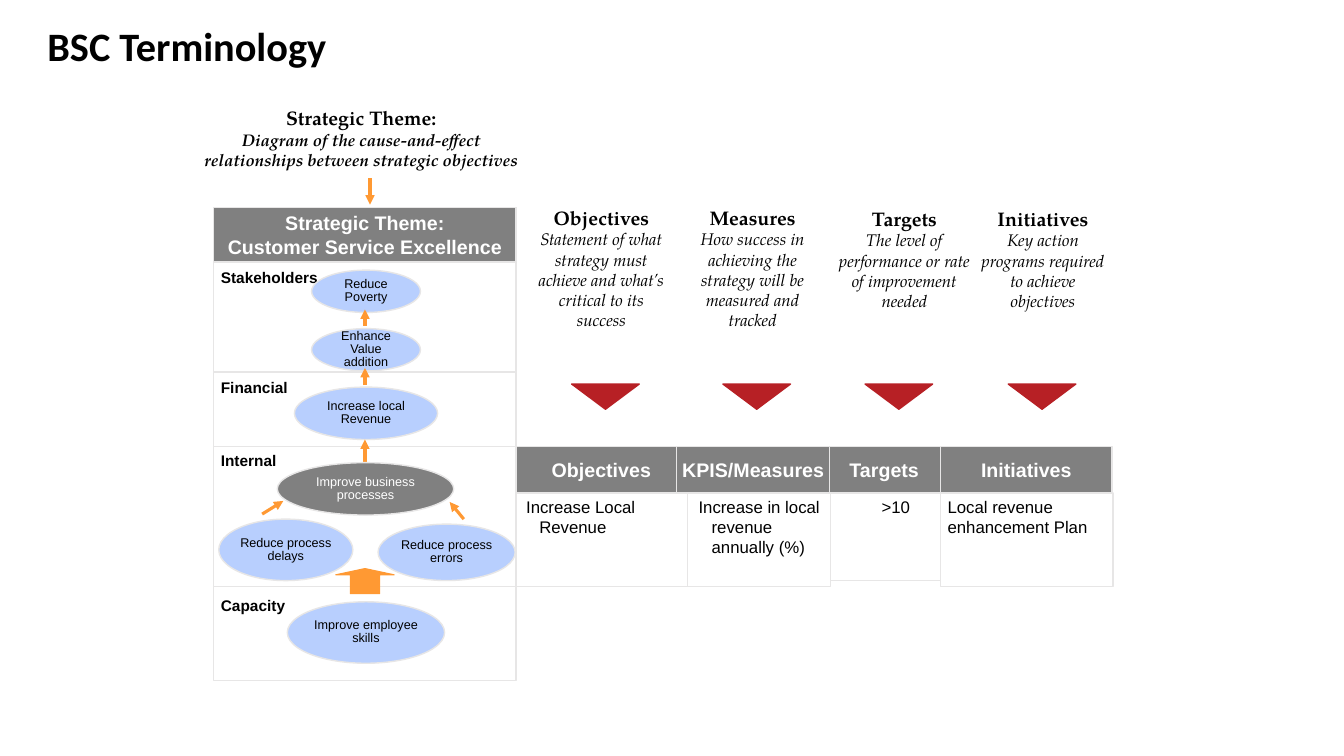
from lxml import etree
from pptx import Presentation
from pptx.dml.color import RGBColor
from pptx.enum.shapes import MSO_CONNECTOR, MSO_SHAPE
from pptx.enum.text import MSO_ANCHOR, PP_ALIGN
from pptx.oxml.ns import qn
from pptx.util import Inches, Pt

RECT, OVAL = MSO_SHAPE.RECTANGLE, MSO_SHAPE.OVAL
WEDGE, BLOCK = MSO_SHAPE.ISOSCELES_TRIANGLE, MSO_SHAPE.UP_ARROW
LINE = MSO_CONNECTOR.STRAIGHT
LEFT, MID = PP_ALIGN.LEFT, PP_ALIGN.CENTER
TOP, HALF = MSO_ANCHOR.TOP, MSO_ANCHOR.MIDDLE

BLACK = RGBColor(0x00, 0x00, 0x00)
WHITE = RGBColor(0xFF, 0xFF, 0xFF)
GRAY = RGBColor(0x80, 0x80, 0x80)
PALE = RGBColor(0xE7, 0xE6, 0xE6)
BLUE = RGBColor(0xB8, 0xCF, 0xFE)
AMBER = RGBColor(0xFF, 0x99, 0x33)
RED = RGBColor(0xB7, 0x20, 0x25)

SANS, SERIF, HEAD = "Arial", "TeX Gyre Pagella", "Calibri"
WIDE, HIGH = Inches(13.33), Inches(7.5)
COLS, ROWS = 133.3, 75


def place(box, x, y, w, h):
    """Turn grid cells counted from a box into slide lengths."""
    left, top = box[:2]
    return (round((left + x) * WIDE / COLS), round((top + y) * HIGH / ROWS),
            round(w * WIDE / COLS), round(h * HIGH / ROWS))


def write(para, text, size, font=SANS, color=BLACK, bold=False, slant=False):
    """Add one run to a paragraph."""
    run = para.add_run()
    run.text = text
    run.font.name, run.font.size = font, Pt(size)
    run.font.bold, run.font.italic = bold, slant
    run.font.color.rgb = color


def frame(shape, side, edge, anchor, wrap=True):
    """Set the insets and anchor of a shape's text."""
    text = shape.text_frame
    text.word_wrap, text.vertical_anchor = wrap, anchor
    text.margin_left = text.margin_right = Inches(side)
    text.margin_top = text.margin_bottom = Inches(edge)
    return text


def draw(slide, kind, spot, fill, edge=PALE, width=1):
    """Add a filled shape without shadow."""
    shape = slide.shapes.add_shape(kind, *spot)
    shape.shadow.inherit = False
    shape.fill.solid()
    shape.fill.fore_color.rgb = fill
    shape.line.color.rgb = edge
    shape.line.width = Pt(width)
    return shape


def link(slide, box, ends, color, width, arrow=False):
    """Join two grid points with a line or an arrow."""
    x, y, dx, dy = ends
    start, stop = place(box, x, y, 0, 0)[:2], place(box, dx, dy, 0, 0)[:2]
    line = slide.shapes.add_connector(LINE, *start, *stop)
    line.line.color.rgb = color
    line.line.width = Pt(width)
    props = line.element.spPr
    if arrow:
        etree.SubElement(props.find(qn("a:ln")), qn("a:tailEnd"), type="triangle")
    etree.SubElement(props, qn("a:effectLst"))


def band(slide, spot, lines):
    """Draw a gray header band with centred bold text."""
    text = frame(draw(slide, RECT, spot, GRAY), 0.05, 0.05, HALF)
    for i, words in enumerate(lines):
        para = text.add_paragraph() if i else text.paragraphs[0]
        para.alignment = MID
        write(para, words, 14, color=WHITE, bold=True)


def node(slide, box, words, cells, fill=BLUE, color=BLACK):
    """Draw one goal of the map as an ellipse."""
    shape = draw(slide, OVAL, place(box, *cells), fill)
    para = frame(shape, 0, 0.06, HALF).paragraphs[0]
    para.alignment, para.line_spacing = MID, 0.85
    write(para, words, 9, color=color)


def note(slide, box, head, words, bold=False):
    """Write a serif heading with its italic meaning."""
    shape = slide.shapes.add_textbox(*place(box, 0, 0, *box[2:]))
    text = frame(shape, 0.1, 0.05, TOP)
    first, rest = text.paragraphs[0], text.add_paragraph()
    first.alignment = rest.alignment = MID
    write(first, head, 14, SERIF, bold=True)
    write(rest, words, 12, SERIF, bold=bold, slant=True)


def theme(slide, box):
    """Draw the strategy map with its four layers."""
    w, h = box[2:]
    draw(slide, RECT, place(box, 0, 0, w, h), WHITE)
    for y in (16.3, 23.7, 37.6):
        link(slide, box, (0, y, w, y), PALE, 1)
    band(slide, place(box, 0, 0, w, 5.4),
         ("Strategic Theme:", "Customer Service Excellence"))
    for words, y, wide in (("Stakeholders", 6, 10.8), ("Financial", 16.9, 7.5),
                           ("Internal", 24.1, 6), ("Capacity", 38.5, 7.8)):
        label = slide.shapes.add_textbox(*place(box, 0.7, y, wide, 1.9))
        text = frame(label, 0, 0, HALF, False)
        write(text.paragraphs[0], words, 11, bold=True)
    for words, cells in (
            ("Reduce Poverty", (9.7, 6.2, 10.8, 4.2)),
            ("Enhance Value addition", (9.7, 12, 10.8, 4.2)),
            ("Increase local Revenue", (8, 17.8, 14.2, 5.2)),
            ("Reduce process delays", (0.5, 30.9, 13.3, 6.1)),
            ("Reduce process errors", (16.3, 31.4, 13.6, 5.6)),
            ("Improve employee skills", (7.3, 39.1, 15.6, 6.1))):
        node(slide, box, words, cells)
    for ends in ((15.5, -2.9, 15.5, -0.3), (15, 11.7, 15, 10.1),
                 (15, 17.6, 15, 15.9), (15, 25.5, 15, 23),
                 (4.8, 30.4, 6.9, 29.1), (24.8, 30.9, 23.4, 29.2)):
        link(slide, box, ends, AMBER, 2.25, True)
    lift = draw(slide, BLOCK, place(box, 12.1, 35.8, 5.8, 2.5), AMBER, AMBER, 0.75)
    lift.adjustments[0], lift.adjustments[1] = 0.5, 0.25
    node(slide, box, "Improve business processes", (6.3, 25.3, 17.5, 5.2),
         GRAY, WHITE)


def card(slide, box, head, words, top, body, text, align=LEFT, hang=-0.13):
    """Draw one column of the score card: body, header and entry."""
    tall = 4.6
    x, y, w = body
    draw(slide, RECT, place(box, x, y, w, box[3] - tall), WHITE)
    band(slide, place(box, top[0], 0, top[1], tall), (head,))
    entry = slide.shapes.add_textbox(*place(box, text[0], 4.5, text[1], 7.1))
    para = frame(entry, 0.1, 0.05, TOP).paragraphs[0]
    para.alignment = align
    props = para._p.get_or_add_pPr()
    props.set("marL", str(Inches(0.13)))
    props.set("indent", str(Inches(hang)))
    write(para, words, 12)


def score(slide, box):
    """Draw the score card in stacking order."""
    card(slide, box, "Objectives", "Increase Local Revenue",
         (0, 17.1), (0, 4.6, 17.1), (0.1, 15.5))
    card(slide, box, "Targets", ">10",
         (30.9, 11.4), (30.5, 4, 15.3), (30.6, 14.3), MID)
    card(slide, box, "Initiatives", "Local revenue enhancement Plan",
         (42.2, 17), (42.2, 4.6, 17.1), (40.6, 17.4), hang=0)
    card(slide, box, "KPIS/Measures", "Increase in local revenue annually (%)",
         (16, 15.2), (17.1, 4.6, 14.2), (17.2, 15.9))


def terms(slide, box):
    """Explain each column and point down to it."""
    for head, words, x, y, w, tip in (
            ("Objectives", "Statement of what strategy must achieve and "
             "what’s critical to its success", 0, 0, 15.1, 4.6),
            ("Measures", "How success in achieving the strategy will be "
             "measured and tracked", 14.7, 0, 15.7, 19.6),
            ("Targets", "The level of performance or rate of improvement "
             "needed", 29.9, 0.1, 15.4, 33.7),
            ("Initiatives", "Key action programs required to achieve "
             "objectives", 44.2, 0.1, 14.3, 47.9)):
        note(slide, (box[0] + x, box[1] + y, w, 13.4), head, words)
        wedge = draw(slide, WEDGE, place(box, tip, 18.2, 6.7, 2.5), RED, RED)
        wedge.rotation = 180


def title(slide, box, words):
    """Move and format the slide's title."""
    shape = slide.shapes.title
    shape.left, shape.top, shape.width, shape.height = place(box, 0, 0, *box[2:])
    para = frame(shape, 0.1, 0.05, HALF).paragraphs[0]
    para.alignment, para.line_spacing = LEFT, 0.9
    write(para, words, 28.8, HEAD, bold=True)


def main():
    """Build and save the slide."""
    deck = Presentation()
    deck.slide_width, deck.slide_height = WIDE, HIGH
    slide = deck.slides.add_slide(deck.slide_layouts[5])
    title(slide, (3.7, 2.6, 128, 4.4), "BSC Terminology")
    score(slide, (51.1, 44.3, 59.3, 13.9))
    theme(slide, (21.2, 20.6, 30, 46.9))
    note(slide, (19.2, 10, 33.3, 7.4), "Strategic Theme:", "Diagram of the "
         "cause-and-effect relationships between strategic objectives", True)
    terms(slide, (52.1, 19.9, 58.5, 20.8))
    deck.save("out.pptx")


if __name__ == "__main__":
    main()
